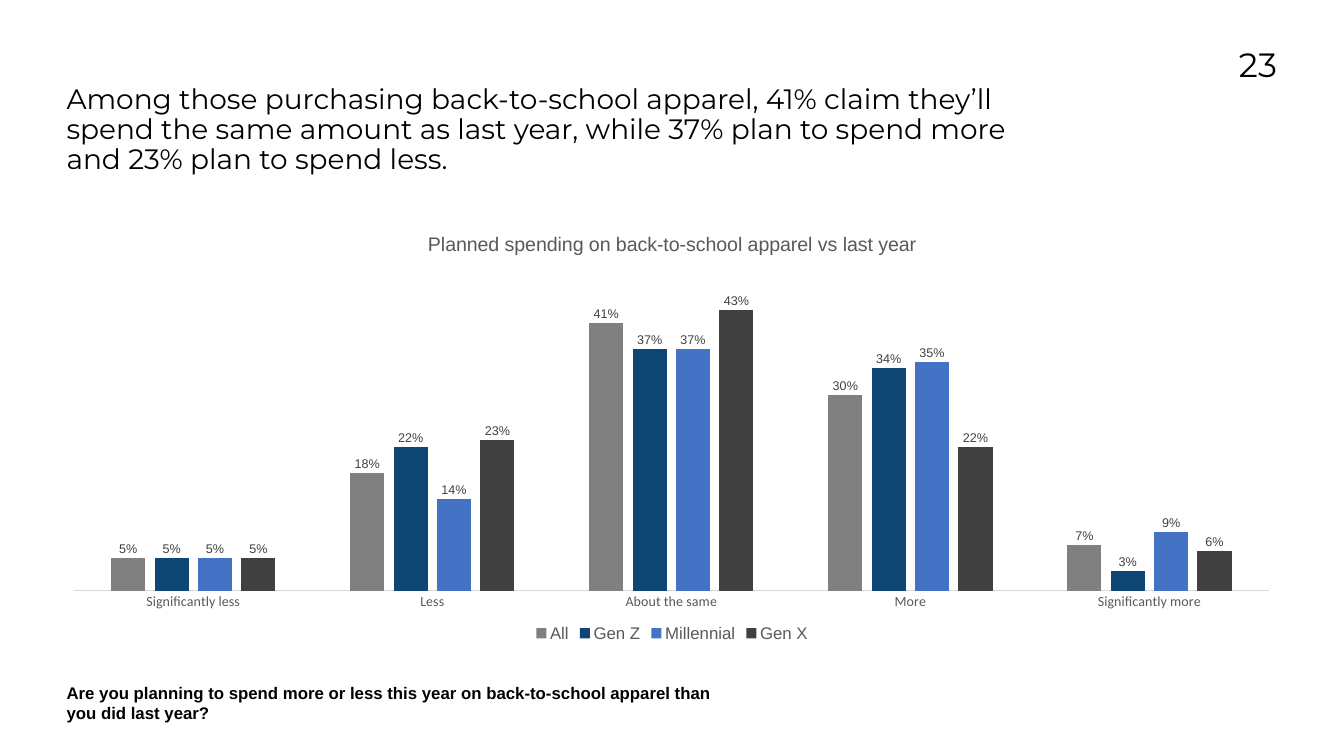
from dataclasses import dataclass

from lxml import etree
from pptx import Presentation
from pptx.chart.chart import Chart
from pptx.chart.data import CategoryChartData
from pptx.dml.color import RGBColor
from pptx.enum.chart import XL_CHART_TYPE, XL_LABEL_POSITION, XL_LEGEND_POSITION, XL_TICK_MARK
from pptx.enum.text import MSO_ANCHOR, MSO_AUTO_SIZE, PP_ALIGN
from pptx.oxml.ns import qn
from pptx.shapes.base import BaseShape
from pptx.slide import Slide
from pptx.util import Inches, Pt

CLUSTERED = XL_CHART_TYPE.COLUMN_CLUSTERED
OUTSIDE_END = XL_LABEL_POSITION.OUTSIDE_END
LEGEND_BOTTOM = XL_LEGEND_POSITION.BOTTOM
NO_TICK = XL_TICK_MARK.NONE
TOP = MSO_ANCHOR.TOP
NO_AUTO_SIZE = MSO_AUTO_SIZE.NONE
LEFT = PP_ALIGN.LEFT
RIGHT = PP_ALIGN.RIGHT


@dataclass(frozen=True)
class Theme:
    heading_font: str = "Montserrat"
    body_font: str = "Arial"
    axis_font: str = "Calibri"
    black: str = "000000"
    muted: str = "595959"
    label: str = "404040"
    axis_line: str = "D9D9D9"
    number_size: int = 48
    heading_size: int = 40
    chart_title_size: int = 28
    body_size: int = 24
    axis_size: int = 20
    label_size: int = 18


@dataclass(frozen=True)
class Box:
    left: float
    top: float
    width: float
    height: float


@dataclass(frozen=True)
class TextBlock:
    text: str
    box: Box
    font: str
    size: int
    bold: bool = False
    alignment: PP_ALIGN = LEFT
    line_spacing: float = 1.0


@dataclass(frozen=True)
class Generation:
    name: str
    values: tuple[float, ...]
    color: str


THEME = Theme()
MARGIN = 1.32
CHART_BOX = Box(MARGIN, 4.3, 24.03, 8.52)
PLOT_AREA = {"x": 0.006, "y": 0.11, "w": 0.987, "h": 0.761}
CHART_TITLE = "Planned spending on back-to-school apparel vs last year"
ANSWERS = ("Significantly less", "Less", "About the same", "More", "Significantly more")
GENERATIONS = (
    Generation("All", (0.05, 0.18, 0.41, 0.30, 0.07), "808080"),
    Generation("Gen Z", (0.05, 0.22, 0.37, 0.34, 0.03), "104674"),
    Generation("Millennial", (0.05, 0.14, 0.37, 0.35, 0.09), "4472C4"),
    Generation("Gen X", (0.05, 0.23, 0.43, 0.22, 0.06), "404040"),
)
HEADLINE = TextBlock(
    "Among those purchasing back-to-school apparel, 41% claim they’ll spend the same amount "
    "as last year, while 37% plan to spend more and 23% plan to spend less.",
    Box(MARGIN, 1.69, 18.89, 2.08),
    THEME.heading_font,
    THEME.heading_size,
    line_spacing=0.9,
)
QUESTION = TextBlock(
    "Are you planning to spend more or less this year on back-to-school apparel "
    "than you did last year?",
    Box(MARGIN, 13.55, 13.27, 0.65),
    THEME.body_font,
    THEME.body_size,
    bold=True,
)
PAGE_NUMBER = TextBlock(
    "23", Box(23.09, 0.88, 2.25, 1.64), THEME.heading_font, THEME.number_size, alignment=RIGHT
)


def style_font(font, name: str, size: int, color: str, bold: bool = False) -> None:
    font.name = name
    font.size = Pt(size)
    font.bold = bold
    font.color.rgb = RGBColor.from_string(color)


def inches(box: Box) -> tuple[Inches, ...]:
    return tuple(Inches(length) for length in (box.left, box.top, box.width, box.height))


def write_text(shape: BaseShape, block: TextBlock) -> None:
    shape.left, shape.top, shape.width, shape.height = inches(block.box)
    frame = shape.text_frame
    frame.word_wrap = True
    frame.auto_size = NO_AUTO_SIZE
    frame.vertical_anchor = TOP
    frame.margin_left = frame.margin_top = frame.margin_right = frame.margin_bottom = 0
    paragraph = frame.paragraphs[0]
    paragraph.alignment = block.alignment
    paragraph.line_spacing = block.line_spacing
    run = paragraph.add_run()
    run.text = block.text
    style_font(run.font, block.font, block.size, THEME.black, block.bold)


def add_text(slide: Slide, block: TextBlock) -> None:
    write_text(slide.shapes.add_textbox(*inches(block.box)), block)


def place_plot_area(chart: Chart) -> None:
    plot_area = chart.element.find(f".//{qn('c:plotArea')}")
    layout = plot_area.find(qn("c:layout"))
    if layout is None:
        layout = etree.Element(qn("c:layout"))
        plot_area.insert(0, layout)
    manual = etree.SubElement(layout, qn("c:manualLayout"))
    settings = {"layoutTarget": "inner", "xMode": "edge", "yMode": "edge", **PLOT_AREA}
    for tag, value in settings.items():
        etree.SubElement(manual, qn(f"c:{tag}")).set("val", str(value))


def style_axes(chart: Chart) -> None:
    category_axis = chart.category_axis
    category_axis.major_tick_mark = NO_TICK
    category_axis.minor_tick_mark = NO_TICK
    category_axis.format.line.color.rgb = RGBColor.from_string(THEME.axis_line)
    category_axis.format.line.width = Pt(0.75)
    style_font(category_axis.tick_labels.font, THEME.axis_font, THEME.axis_size, THEME.muted)
    value_axis = chart.value_axis
    value_axis.minimum_scale = 0
    value_axis.maximum_scale = 0.5
    value_axis.has_major_gridlines = False
    value_axis.visible = False


def style_bars(chart: Chart) -> None:
    plot = chart.plots[0]
    plot.gap_width = 219
    plot.overlap = -27
    plot.vary_by_categories = False
    for series, generation in zip(plot.series, GENERATIONS):
        series.format.fill.solid()
        series.format.fill.fore_color.rgb = RGBColor.from_string(generation.color)
        labels = series.data_labels
        labels.show_value = True
        labels.position = OUTSIDE_END
        labels.number_format = "0%"
        labels.number_format_is_linked = False
        style_font(labels.font, THEME.body_font, THEME.label_size, THEME.label)


def add_spending_chart(slide: Slide) -> None:
    chart_data = CategoryChartData(number_format="0%")
    chart_data.categories = ANSWERS
    for generation in GENERATIONS:
        chart_data.add_series(generation.name, generation.values)
    chart = slide.shapes.add_chart(CLUSTERED, *inches(CHART_BOX), chart_data).chart
    chart.has_title = True
    run = chart.chart_title.text_frame.paragraphs[0].add_run()
    run.text = CHART_TITLE
    style_font(run.font, THEME.body_font, THEME.chart_title_size, THEME.muted)
    chart.has_legend = True
    chart.legend.position = LEGEND_BOTTOM
    chart.legend.include_in_layout = False
    style_font(chart.legend.font, THEME.body_font, THEME.body_size, THEME.muted)
    style_axes(chart)
    style_bars(chart)
    place_plot_area(chart)


def main() -> None:
    presentation = Presentation()
    presentation.slide_width = Inches(26.67)
    presentation.slide_height = Inches(15)
    slide = presentation.slides.add_slide(presentation.slide_layouts.get_by_name("Title Only"))
    add_spending_chart(slide)
    write_text(slide.shapes.title, HEADLINE)
    add_text(slide, QUESTION)
    add_text(slide, PAGE_NUMBER)
    presentation.save("out.pptx")


if __name__ == "__main__":
    main()
